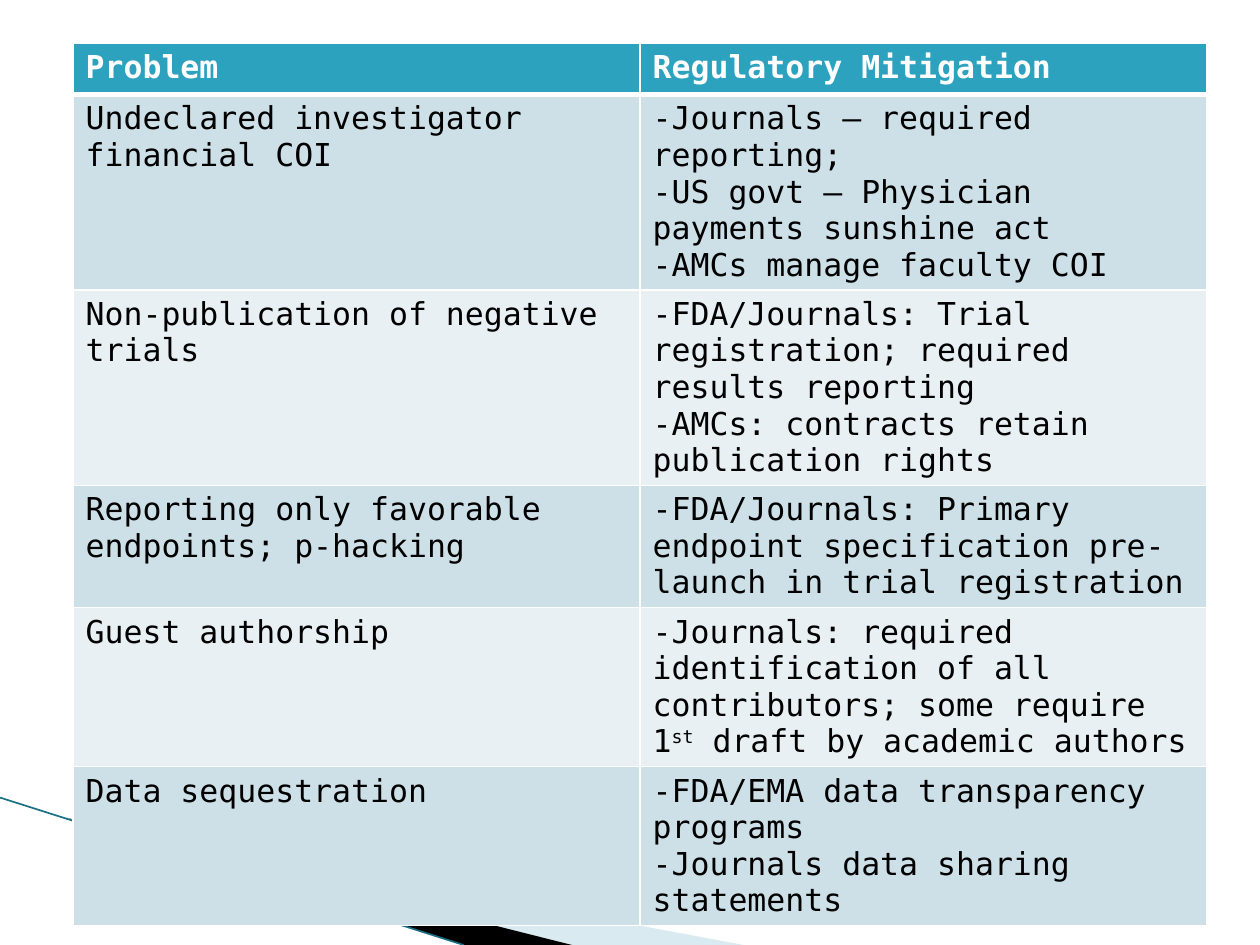
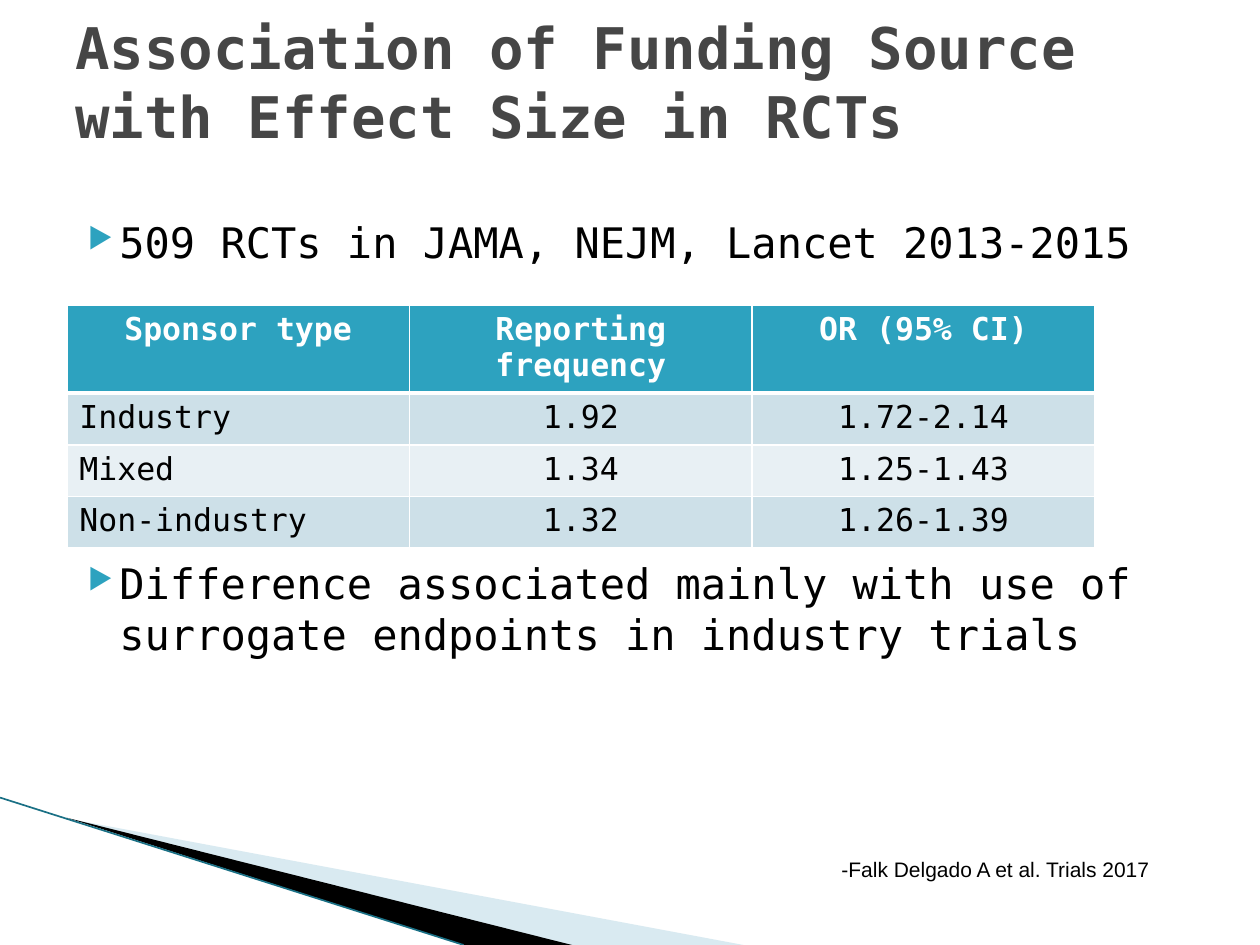
"""Build two slides on bias in clinical trials: mitigations and funding effects."""
from dataclasses import dataclass
from typing import NamedTuple, Optional

import lxml.etree
import pptx
import pptx.dml.color
import pptx.enum.shapes
import pptx.enum.text
import pptx.oxml.ns
import pptx.util

RGB = pptx.dml.color.RGBColor
ALIGN = pptx.enum.text.PP_ALIGN
qn = pptx.oxml.ns.qn

WHITE = RGB(0xFF, 0xFF, 0xFF)
BLACK = RGB(0x00, 0x00, 0x00)
TEAL = RGB(0x2D, 0xA2, 0xBF)
DEEP_TEAL = RGB(0x1A, 0x70, 0x85)
PALE_TEAL = RGB(0xA0, 0xCB, 0xDC)
TITLE_GREY = RGB(0x46, 0x46, 0x46)
ROW_TINTS = (RGB(0xCD, 0xE0, 0xE8), RGB(0xE8, 0xF0, 0xF4))

MONO = "DejaVu Sans Mono"
COLUMNS, ROWS = 100, 75
CELL = 0.1
ROW_PADDING, LINE_ROWS, MIN_ROW = 1.0, 2.9, 4.1


class Run(NamedTuple):
    text: str
    raised: bool = False


class Area(NamedTuple):
    column: float
    row: float
    columns: float
    rows: float


Paragraph = tuple[Run, ...]
Entry = tuple[Paragraph, ...]


@dataclass(frozen=True)
class Style:
    size: float
    color: RGB = BLACK
    bold: bool = False
    face: str = MONO


@dataclass(frozen=True)
class Wedge:
    corners: tuple[tuple[float, float], ...]
    color: RGB
    opacity: Optional[int] = None


@dataclass(frozen=True)
class Record:
    entries: tuple[Entry, ...]
    lines: int = 1


@dataclass(frozen=True)
class Grid:
    column: float
    row: float
    column_width: float
    records: tuple[Record, ...]
    alignments: tuple[ALIGN, ...]
    heading_alignment: ALIGN


TITLE = Style(32.8, TITLE_GREY, bold=True)
BODY = Style(24)
HEADING = Style(18, WHITE, bold=True)
ENTRY = Style(18)
CITATION = Style(12, face="Arial")

WEDGES = (
    Wedge(((5.5, 65), (59, 75), (45.2, 75)), PALE_TEAL, 40),
    Wedge(((5.3, 64.9), (45.4, 75), (36.8, 75)), BLACK),
)
SWEEP = ((0, 63.3), (36.8, 75))


def span(cells: float) -> int:
    return pptx.util.Inches(cells * CELL)


def lines(*texts: str) -> Entry:
    return tuple((Run(text),) for text in texts)


def record(*texts: str, height: int = 1) -> Record:
    return Record(tuple(lines(text) for text in texts), height)


MITIGATIONS = Grid(5.8, 3.4, 45, (
    record("Problem", "Regulatory Mitigation"),
    Record((lines("Undeclared investigator financial COI"),
            lines("-Journals – required reporting;",
                  "-US govt – Physician payments sunshine act",
                  "-AMCs manage faculty COI")), 5),
    Record((lines("Non-publication of negative trials"),
            lines("-FDA/Journals: Trial registration; required results reporting",
                  "-AMCs: contracts retain publication rights")), 5),
    record("Reporting only favorable endpoints; p-hacking",
           "-FDA/Journals: Primary endpoint specification pre-launch in trial registration",
           height=3),
    Record((lines("Guest authorship"),
            ((Run("-Journals: required identification of all contributors; some require 1"),
              Run("st", raised=True), Run(" draft by academic authors")),)), 4),
    Record((lines("Data sequestration"),
            lines("-FDA/EMA data transparency programs",
                  "-Journals data sharing statements")), 4),
), (ALIGN.LEFT, ALIGN.LEFT), ALIGN.LEFT)

EFFECT_SIZES = Grid(5.3, 24.2, 27.2, (
    record("Sponsor type", "Reporting frequency", "OR (95% CI)", height=2),
    record("Industry", "1.92", "1.72-2.14"),
    record("Mixed", "1.34", "1.25-1.43"),
    record("Non-industry", "1.32", "1.26-1.39"),
), (ALIGN.LEFT, ALIGN.CENTER, ALIGN.CENTER), ALIGN.CENTER)


def write_runs(paragraph, runs: Paragraph, style: Style) -> None:
    for part in runs:
        run = paragraph.add_run()
        run.text = part.text
        run.font.name = style.face
        run.font.size = pptx.util.Pt(style.size)
        run.font.bold = style.bold
        run.font.color.rgb = style.color
        if part.raised:
            run.font._element.set("baseline", "30000")


def write_entry(frame, entry: Entry, style: Style, alignment: ALIGN = ALIGN.LEFT) -> list:
    frame.word_wrap = True
    for index, runs in enumerate(entry):
        paragraph = frame.add_paragraph() if index else frame.paragraphs[0]
        paragraph.alignment = alignment
        write_runs(paragraph, runs, style)
    return list(frame.paragraphs)


def add_text(slide, area: Area, entry: Entry, style: Style, top_inset: float = 0.5) -> list:
    frame = slide.shapes.add_textbox(*map(span, area)).text_frame
    frame.margin_top = span(top_inset)
    return write_entry(frame, entry, style)


def add_bullet(paragraph) -> None:
    properties = paragraph._p.get_or_add_pPr()
    properties.set("marL", str(span(3.5)))
    properties.set("indent", str(span(-2.5)))
    color = lxml.etree.SubElement(properties, qn("a:buClr"))
    lxml.etree.SubElement(color, qn("a:srgbClr"), val=str(TEAL))
    lxml.etree.SubElement(properties, qn("a:buSzPct"), val="68000")
    lxml.etree.SubElement(properties, qn("a:buChar"), char="▶")


def add_borders(cell, top: float, bottom: float) -> None:
    properties = cell._tc.get_or_add_tcPr()
    for side, width in (("L", 1), ("R", 1), ("T", top), ("B", bottom)):
        edge = lxml.etree.SubElement(properties, qn(f"a:ln{side}"), w=str(pptx.util.Pt(width)))
        fill = lxml.etree.SubElement(edge, qn("a:solidFill"))
        lxml.etree.SubElement(fill, qn("a:srgbClr"), val=str(WHITE))


def add_grid(slide, grid: Grid) -> None:
    heights = [max(MIN_ROW, ROW_PADDING + LINE_ROWS * item.lines) for item in grid.records]
    count = len(grid.alignments)
    area = Area(grid.column, grid.row, grid.column_width * count, sum(heights))
    table = slide.shapes.add_table(len(heights), count, *map(span, area)).table
    table.horz_banding = False
    for column in table.columns:
        column.width = span(grid.column_width)
    for row, (item, height) in enumerate(zip(grid.records, heights)):
        table.rows[row].height = span(height)
        for column, entry in enumerate(item.entries):
            cell = table.cell(row, column)
            add_borders(cell, 3 if row == 1 else 1, 1 if row else 3)
            cell.fill.solid()
            cell.fill.fore_color.rgb = ROW_TINTS[(row - 1) % 2] if row else TEAL
            write_entry(cell.text_frame, entry, ENTRY if row else HEADING,
                        grid.alignments[column] if row else grid.heading_alignment)


def add_wedge(slide, wedge: Wedge) -> None:
    start, *others = [(span(x), span(y)) for x, y in wedge.corners]
    builder = slide.shapes.build_freeform(*start)
    builder.add_line_segments(others, close=True)
    band = builder.convert_to_shape()
    band.shadow.inherit = False
    band.line.fill.background()
    band.fill.solid()
    band.fill.fore_color.rgb = wedge.color
    if wedge.opacity is not None:
        color = band._element.spPr.find(f"{qn('a:solidFill')}/{qn('a:srgbClr')}")
        lxml.etree.SubElement(color, qn("a:alpha"), val=str(wedge.opacity * 1000))


def add_banded_slide(deck):
    slide = deck.slides.add_slide(deck.slide_layouts[6])
    slide.background.fill.solid()
    slide.background.fill.fore_color.rgb = WHITE
    for wedge in WEDGES:
        add_wedge(slide, wedge)
    ends = [span(value) for point in SWEEP for value in point]
    sweep = slide.shapes.add_connector(pptx.enum.shapes.MSO_CONNECTOR.STRAIGHT, *ends)
    sweep.line.color.rgb = DEEP_TEAL
    sweep.line.width = pptx.util.Pt(0.95)
    lxml.etree.SubElement(sweep._element.spPr, qn("a:effectLst"))
    return slide


def build_mitigations(deck) -> None:
    add_grid(add_banded_slide(deck), MITIGATIONS)


def build_effect_sizes(deck) -> None:
    slide = add_banded_slide(deck)
    findings = add_text(slide, Area(5, 16.2, 90, 49.5), lines(
        "509 RCTs in JAMA, NEJM, Lancet 2013-2015",
        "Difference associated mainly with use of surrogate endpoints in industry trials",
    ), BODY, top_inset=1)
    for finding in findings:
        add_bullet(finding)
    findings[1].space_before = pptx.util.Pt(166)
    add_text(slide, Area(5, 1, 90, 12.5),
             lines("Association of Funding Source with Effect Size in RCTs"), TITLE, top_inset=0)
    add_grid(slide, EFFECT_SIZES)
    add_text(slide, Area(65.8, 67.5, 32.5, 3),
             lines("-Falk Delgado A et al. Trials 2017"), CITATION)


def main() -> None:
    deck = pptx.Presentation()
    deck.slide_width, deck.slide_height = span(COLUMNS), span(ROWS)
    build_mitigations(deck)
    build_effect_sizes(deck)
    deck.save("out.pptx")


if __name__ == "__main__":
    main()
